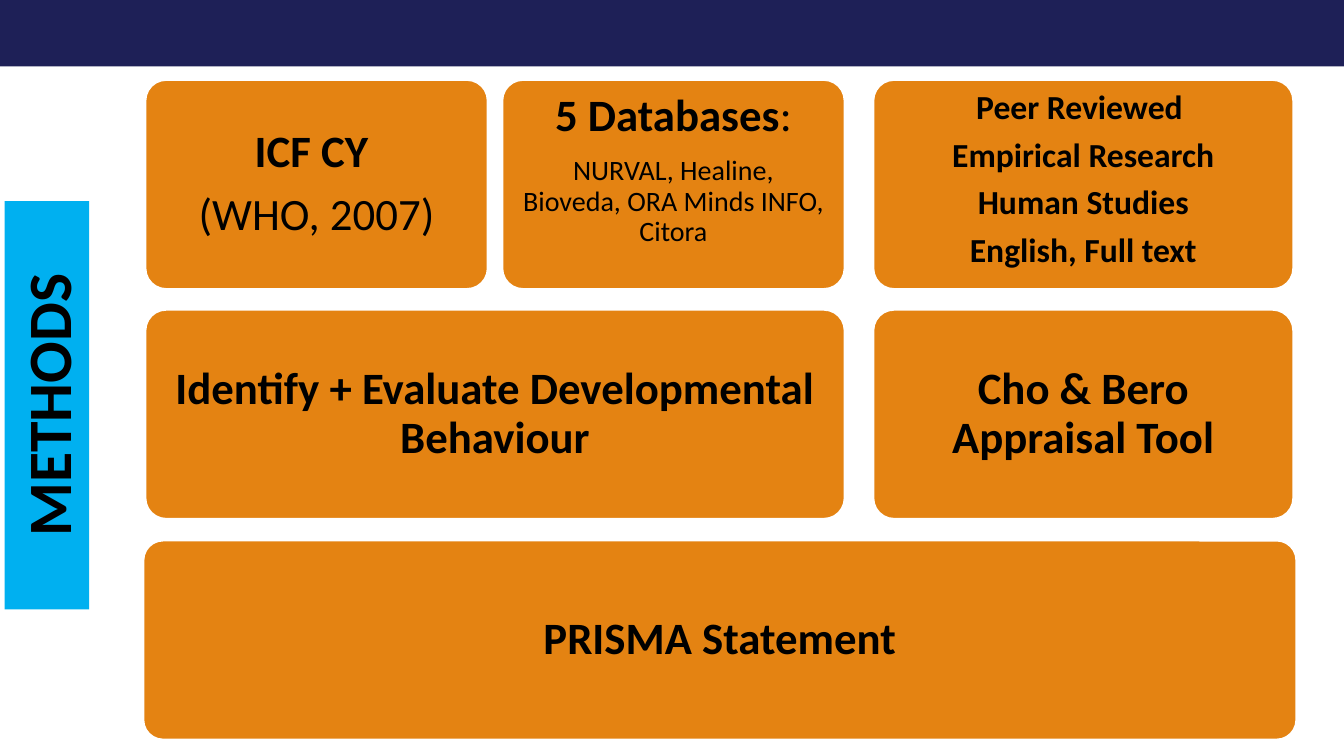
from pptx import Presentation
from pptx import util as u
from pptx.dml.color import RGBColor
from pptx.enum import shapes, text

Inches, Pt = u.Inches, u.Pt


class Theme:
    navy = RGBColor.from_string("1E2057")
    orange = RGBColor.from_string("E48312")
    cyan = RGBColor.from_string("00B0F0")
    white = RGBColor.from_string("FFFFFF")
    black = RGBColor.from_string("000000")
    font = "Calibri"
    heading, large, medium, small = 44, 32, 24, 20
    gap_ratio = 0.34  # space after a paragraph, as a share of its type size


def add_run(paragraph, words, size, bold):
    run = paragraph.add_run()
    run.text = words
    run.font.color.rgb = Theme.black
    look = {"name": Theme.font, "size": Pt(size), "bold": bold}
    for attribute, value in look.items():
        setattr(run.font, attribute, value)


def add_block(kind, left, top, width, height, fill):
    block = slide.shapes.add_shape(
        kind, Inches(left), Inches(top), Inches(width), Inches(height))
    block.shadow.inherit = False
    block.fill.solid()
    block.fill.fore_color.rgb = fill
    return block


prs = Presentation()
prs.slide_width, prs.slide_height = Inches(13.33), Inches(7.5)
slide = prs.slides.add_slide(prs.slide_layouts[5])

# Top band
band = add_block(shapes.MSO_SHAPE.RECTANGLE, 0, 0, 13.33, 0.66, Theme.navy)
band.line.fill.background()

# Vertical title on the left edge
methods = slide.shapes.title
placement = {"left": Inches(-1.56), "top": Inches(3.6), "width": Inches(4.05),
             "height": Inches(0.84), "rotation": 270}
for attribute, value in placement.items():
    setattr(methods, attribute, value)
methods.fill.solid()
methods.fill.fore_color.rgb = Theme.cyan
methods.text_frame.auto_size = text.MSO_AUTO_SIZE.NONE
methods.text_frame.vertical_anchor = text.MSO_ANCHOR.MIDDLE
heading = methods.text_frame.paragraphs[0]
heading.alignment = text.PP_ALIGN.CENTER
add_run(heading, "METHODS", Theme.heading, True)

# Method cards: left, top, width, height, anchor, top inset, paragraphs of runs
row_height, row_step, first_row = 2.08, 2.28, 0.79
second_row = first_row + row_step
L, M, S = Theme.large, Theme.medium, Theme.small
middle, upper = text.MSO_ANCHOR.MIDDLE, text.MSO_ANCHOR.TOP
criteria = ["Peer Reviewed ", "Empirical Research", "Human Studies",
            "English, Full text"]
cards = [
    (1.42, 5.36, 11.44, 1.98, middle, 0.13, [[("PRISMA Statement", L, True)]]),
    (1.44, second_row, 6.94, row_height, middle, 0.13,
     [[("Identify + Evaluate Developmental Behaviour", L, True)]]),
    (1.44, first_row, 3.4, row_height, middle, 0.13,
     [[("ICF CY ", L, True)], [("(WHO, 2007)", L, False)]]),
    (4.98, first_row, 3.4, row_height, upper, 0.07,
     [[("5 Databases", L, True), (":", L, False)],
      [("NURVAL, Healine, Bioveda, ORA Minds INFO, Citora", S, False)]]),
    (8.66, second_row, 4.17, row_height, middle, 0.13,
     [[("Cho & Bero Appraisal Tool", L, True)]]),
    (8.66, first_row, 4.17, row_height, upper, 0.05,
     [[(criterion, M, True)] for criterion in criteria]),
]

for left, top, width, height, anchor, top_inset, paragraphs in cards:
    card = add_block(shapes.MSO_SHAPE.ROUNDED_RECTANGLE,
                     left, top, width, height, Theme.orange)
    card.adjustments[0] = 0.1
    card.line.color.rgb = Theme.white
    card.line.width = Pt(1.75)

    frame = card.text_frame
    layout = {"word_wrap": True, "vertical_anchor": anchor,
              "margin_left": Inches(0.13), "margin_right": Inches(0.13),
              "margin_top": Inches(top_inset), "margin_bottom": Inches(0.13)}
    for attribute, value in layout.items():
        setattr(frame, attribute, value)

    for index, runs in enumerate(paragraphs):
        paragraph = frame.add_paragraph() if index else frame.paragraphs[0]
        spacing = {"alignment": text.PP_ALIGN.CENTER, "line_spacing": 0.9,
                   "space_after": Pt(round(runs[0][1] * Theme.gap_ratio))}
        for attribute, value in spacing.items():
            setattr(paragraph, attribute, value)
        for words, size, bold in runs:
            add_run(paragraph, words, size, bold)

prs.save("out.pptx")
